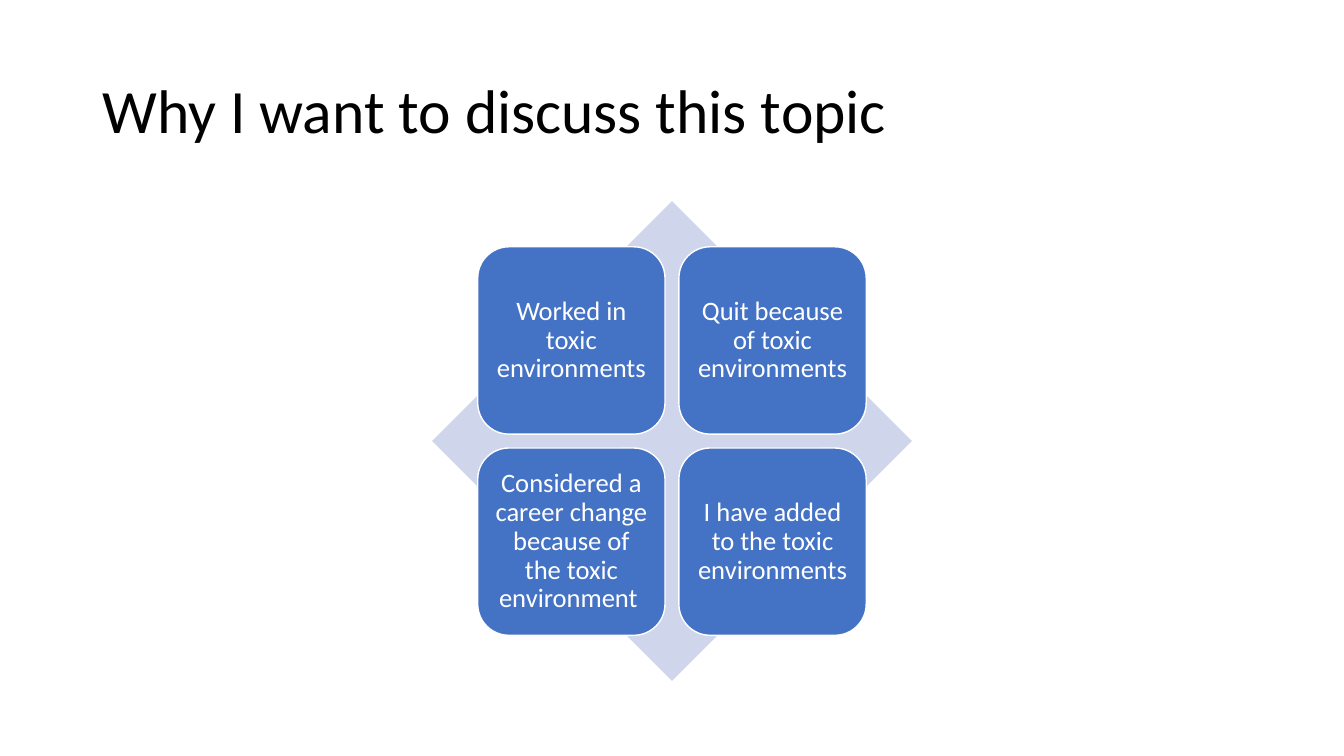
from pptx import Presentation
from pptx.dml.color import RGBColor
from pptx.enum.shapes import MSO_SHAPE as Shape
from pptx.enum.text import MSO_ANCHOR as Anchor, PP_ALIGN as Align
from pptx.util import Cm, Pt

BLACK = RGBColor(0x00, 0x00, 0x00)
WHITE = RGBColor(0xFF, 0xFF, 0xFF)
BLUE = RGBColor(0x44, 0x72, 0xC4)
PALE = RGBColor(0xCF, 0xD5, 0xEA)

REASONS = [
    "Worked in toxic environments",
    "Quit because of toxic environments",
    "Considered a career change because of the toxic environment ",
    "I have added to the toxic environments",
]
LEFT, TOP, SIDE, STEP = 12.04, 6.22, 4.72, 5.07


def apply(item, style):
    for name, value in style.items():
        setattr(item, name, value)


def write(frame, text, size, color, align, pad):
    apply(frame, {"word_wrap": True, "vertical_anchor": Anchor.MIDDLE})
    apply(frame, {f"margin_{side}": Cm(gap) for side, gap in pad.items()})
    para = frame.paragraphs[0]
    apply(para, {"text": text, "alignment": align, "line_spacing": 0.9})
    apply(para.font, {"name": "Calibri", "size": Pt(size)})
    para.font.color.rgb = color


def add_title(slide, text):
    box = slide.shapes.add_textbox(Cm(2.33), Cm(1.01), Cm(29.21), Cm(3.68))
    pad = {"left": 0.25, "right": 0.25, "top": 0.13, "bottom": 0.13}
    write(box.text_frame, text, 44, BLACK, Align.LEFT, pad)


def add_block(slide, kind, left, top, side, fill):
    block = slide.shapes.add_shape(kind, Cm(left), Cm(top), Cm(side), Cm(side))
    block.shadow.inherit = False
    block.fill.solid()
    block.fill.fore_color.rgb = fill
    block.line.fill.background()
    return block


def add_reason(slide, index, text):
    row, col = divmod(index, 2)
    tile = add_block(slide, Shape.ROUNDED_RECTANGLE,
                     LEFT + col * STEP, TOP + row * STEP, SIDE, BLUE)
    tile.line.color.rgb = WHITE
    tile.line.width = Pt(1)
    pad = dict.fromkeys(("left", "right", "top", "bottom"), 0.2)
    write(tile.text_frame, text, 19, WHITE, Align.CENTER, pad)


def main():
    deck = Presentation()
    apply(deck, {"slide_width": Cm(33.87), "slide_height": Cm(19.05)})
    slide = deck.slides.add_slide(deck.slide_layouts[6])
    add_title(slide, "Why I want to discuss this topic")
    add_block(slide, Shape.DIAMOND, 10.89, 5.07, 12.09, PALE)
    for index, text in enumerate(REASONS):
        add_reason(slide, index, text)
    deck.save("out.pptx")


if __name__ == "__main__":
    main()
